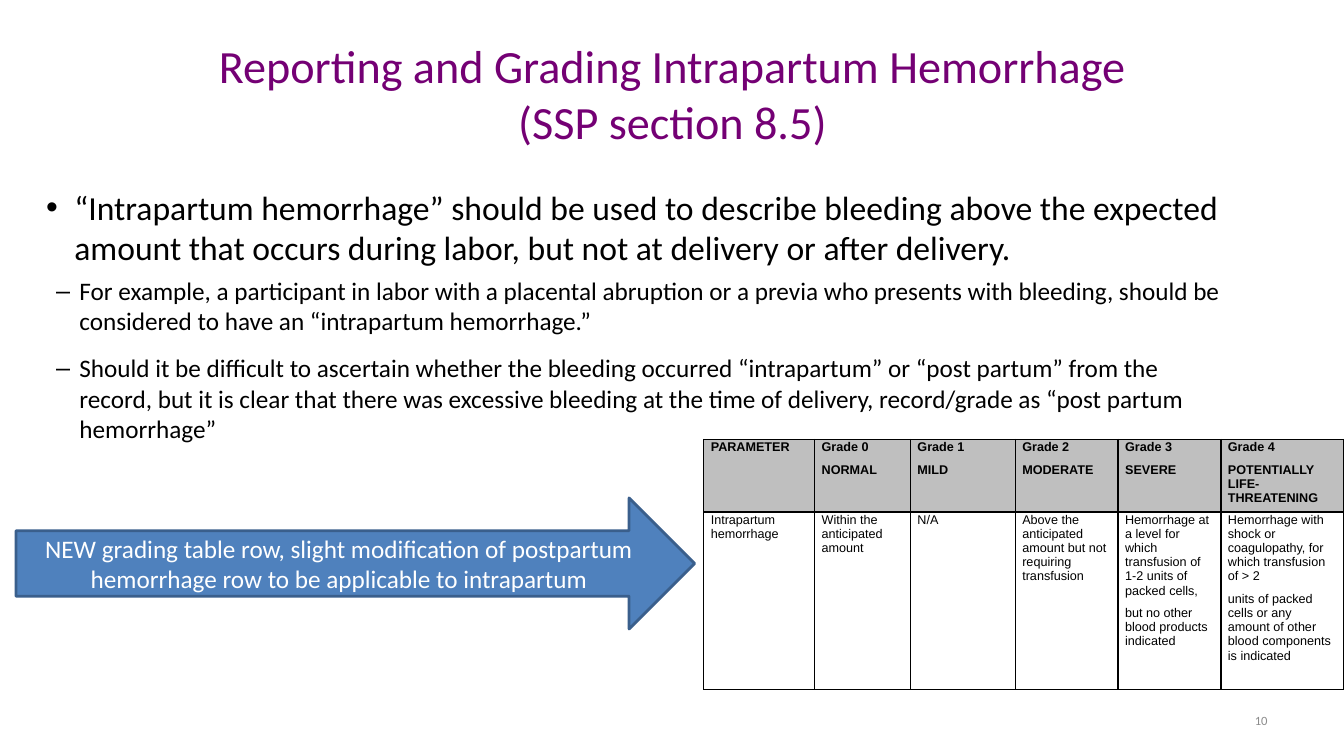
from dataclasses import dataclass

from lxml.etree import SubElement
from pptx import Presentation
from pptx.dml.color import RGBColor
from pptx.enum.shapes import MSO_SHAPE
from pptx.enum.text import MSO_ANCHOR, PP_ALIGN
from pptx.oxml.ns import qn
from pptx.util import Inches, Pt


@dataclass(frozen=True)
class Theme:
    text_font: str = "Calibri"
    table_font: str = "Arial"
    purple: str = "740074"
    black: str = "000000"
    white: str = "FFFFFF"
    gray: str = "8C8C8C"
    header_fill: str = "BFBFBF"
    arrow_fill: str = "4F81BD"
    arrow_line: str = "3A5F8C"
    title_size: int = 33
    lead_size: int = 24
    detail_size: int = 18
    small_size: int = 9


THEME = Theme()

TITLE = "Reporting and Grading Intrapartum Hemorrhage\v(SSP section 8.5)"
LEAD = ("“Intrapartum hemorrhage” should be used to describe bleeding above the "
        "expected amount that occurs during labor, but not at delivery or after delivery.")
DETAILS = [
    "For example, a participant in labor with a placental abruption or a previa who "
    "presents with bleeding, should be considered to have an “intrapartum hemorrhage.”",
    "Should it be difficult to ascertain whether the bleeding occurred “intrapartum” or "
    "“post partum” from the record, but it is clear that there was excessive bleeding at "
    "the time of delivery, record/grade as “post partum hemorrhage”",
]
ARROW_TEXT = ("NEW grading table row, slight modification of postpartum hemorrhage row "
              "to be applicable to intrapartum")

# Each cell is a list of paragraphs
GRADING_ROWS = [
    [["PARAMETER"], ["Grade 0", "NORMAL"], ["Grade 1", "MILD"], ["Grade 2", "MODERATE"],
     ["Grade 3", "SEVERE"], ["Grade 4", "POTENTIALLY LIFE-THREATENING"]],
    [["Intrapartum hemorrhage"], ["Within the anticipated amount"], ["N/A"],
     ["Above the anticipated amount but not requiring transfusion"],
     ["Hemorrhage at a level for which transfusion of 1-2 units of packed cells,",
      "but no other blood products indicated"],
     ["Hemorrhage with shock or coagulopathy, for which transfusion of > 2",
      "units of packed cells or any amount of other blood components is indicated"]],
]
COLUMN_WIDTHS = [1.1, 0.95, 1.04, 1.02, 1.02, 1.22]
ROW_HEIGHTS = [0.72, 1.76]


def set_values(target, values):
    for name, value in values.items():
        setattr(target, name, value)


def format_font(para, size, color, name=THEME.text_font, bold=False):
    for span in para.runs:
        set_values(span.font, {"size": Pt(size), "name": name, "bold": bold})
        span.font.color.rgb = RGBColor.from_string(color)


def add_bullet(para, mark, indent, hanging):
    properties = para._p.get_or_add_pPr()
    properties.set("marL", str(Inches(indent)))
    properties.set("indent", str(-Inches(hanging)))
    SubElement(properties, qn("a:buFont"), typeface="Arial")
    SubElement(properties, qn("a:buChar"), char=mark)


def add_text_box(page, left, top, width, height, anchor=MSO_ANCHOR.TOP):
    box = page.shapes.add_textbox(Inches(left), Inches(top), Inches(width), Inches(height))
    set_values(box.text_frame, {"word_wrap": True, "vertical_anchor": anchor})
    return box.text_frame


def add_title(page):
    title = page.shapes.title
    set_values(title, {"left": Inches(0.67), "top": Inches(0.3),
                       "width": Inches(12), "height": Inches(1.25)})
    title.text_frame.text = TITLE
    title.text_frame.vertical_anchor = MSO_ANCHOR.MIDDLE
    para = title.text_frame.paragraphs[0]
    para.alignment = PP_ALIGN.CENTER
    format_font(para, THEME.title_size, THEME.purple)


def add_guidance(page):
    frame = add_text_box(page, 0.36, 1.8, 12, 5.39)
    lead = frame.paragraphs[0]
    lead.text = LEAD
    add_bullet(lead, "•", 0.28, 0.28)
    format_font(lead, THEME.lead_size, THEME.black)
    for detail in DETAILS:
        para = frame.add_paragraph()
        set_values(para, {"text": detail, "level": 1,
                          "space_before": Pt(6), "space_after": Pt(6)})
        add_bullet(para, "–", 0.33, 0.23)
        format_font(para, THEME.detail_size, THEME.black)


def add_page_number(page):
    frame = add_text_box(page, 9.56, 6.95, 3.11, 0.4, MSO_ANCHOR.MIDDLE)
    para = frame.paragraphs[0]
    set_values(para, {"text": "10", "alignment": PP_ALIGN.RIGHT})
    format_font(para, THEME.small_size, THEME.gray)


def add_borders(cell):
    properties = cell._tc.get_or_add_tcPr()
    for side in ("lnL", "lnR", "lnT", "lnB"):
        line = SubElement(properties, qn(f"a:{side}"), w=str(Pt(1)))
        fill = SubElement(line, qn("a:solidFill"))
        SubElement(fill, qn("a:srgbClr"), val=THEME.black)


def fill_cell(cell, texts, is_header):
    set_values(cell, {"margin_left": Inches(0.07), "margin_right": Inches(0.07),
                      "margin_top": Inches(0.01), "margin_bottom": 0})
    add_borders(cell)
    if is_header:
        cell.fill.solid()
        cell.fill.fore_color.rgb = RGBColor.from_string(THEME.header_fill)
    else:
        cell.fill.background()
    cell.text_frame.text = "\n".join(texts)
    for para in cell.text_frame.paragraphs:
        para.space_after = Pt(6)
        format_font(para, THEME.small_size, THEME.black, THEME.table_font, is_header)


def add_grading_table(page):
    table = page.shapes.add_table(
        len(ROW_HEIGHTS), len(COLUMN_WIDTHS), Inches(6.98), Inches(4.36),
        Inches(sum(COLUMN_WIDTHS)), Inches(sum(ROW_HEIGHTS))).table
    for column, width in zip(table.columns, COLUMN_WIDTHS):
        column.width = Inches(width)
    for row, height in zip(table.rows, ROW_HEIGHTS):
        row.height = Inches(height)
    for row_index, row_texts in enumerate(GRADING_ROWS):
        for column_index, texts in enumerate(row_texts):
            fill_cell(table.cell(row_index, column_index), texts, row_index == 0)


def add_arrow(page):
    arrow = page.shapes.add_shape(MSO_SHAPE.RIGHT_ARROW, Inches(0.16), Inches(4.94),
                                  Inches(6.73), Inches(1.3))
    arrow.shadow.inherit = False
    arrow.fill.solid()
    arrow.fill.fore_color.rgb = RGBColor.from_string(THEME.arrow_fill)
    arrow.line.color.rgb = RGBColor.from_string(THEME.arrow_line)
    arrow.line.width = Pt(2)
    set_values(arrow.text_frame, {"word_wrap": True, "vertical_anchor": MSO_ANCHOR.MIDDLE})
    para = arrow.text_frame.paragraphs[0]
    set_values(para, {"text": ARROW_TEXT, "alignment": PP_ALIGN.CENTER})
    format_font(para, THEME.detail_size, THEME.white)


def main():
    deck = Presentation()
    set_values(deck, {"slide_width": Inches(13.33), "slide_height": Inches(7.5)})
    page = deck.slides.add_slide(deck.slide_layouts.get_by_name("Title Only"))
    page.background.fill.solid()
    page.background.fill.fore_color.rgb = RGBColor.from_string(THEME.white)

    # Heading and guidance
    add_title(page)
    add_guidance(page)
    add_page_number(page)

    # Grading table and the arrow pointing to it
    add_grading_table(page)
    add_arrow(page)
    deck.save("out.pptx")


if __name__ == "__main__":
    main()
